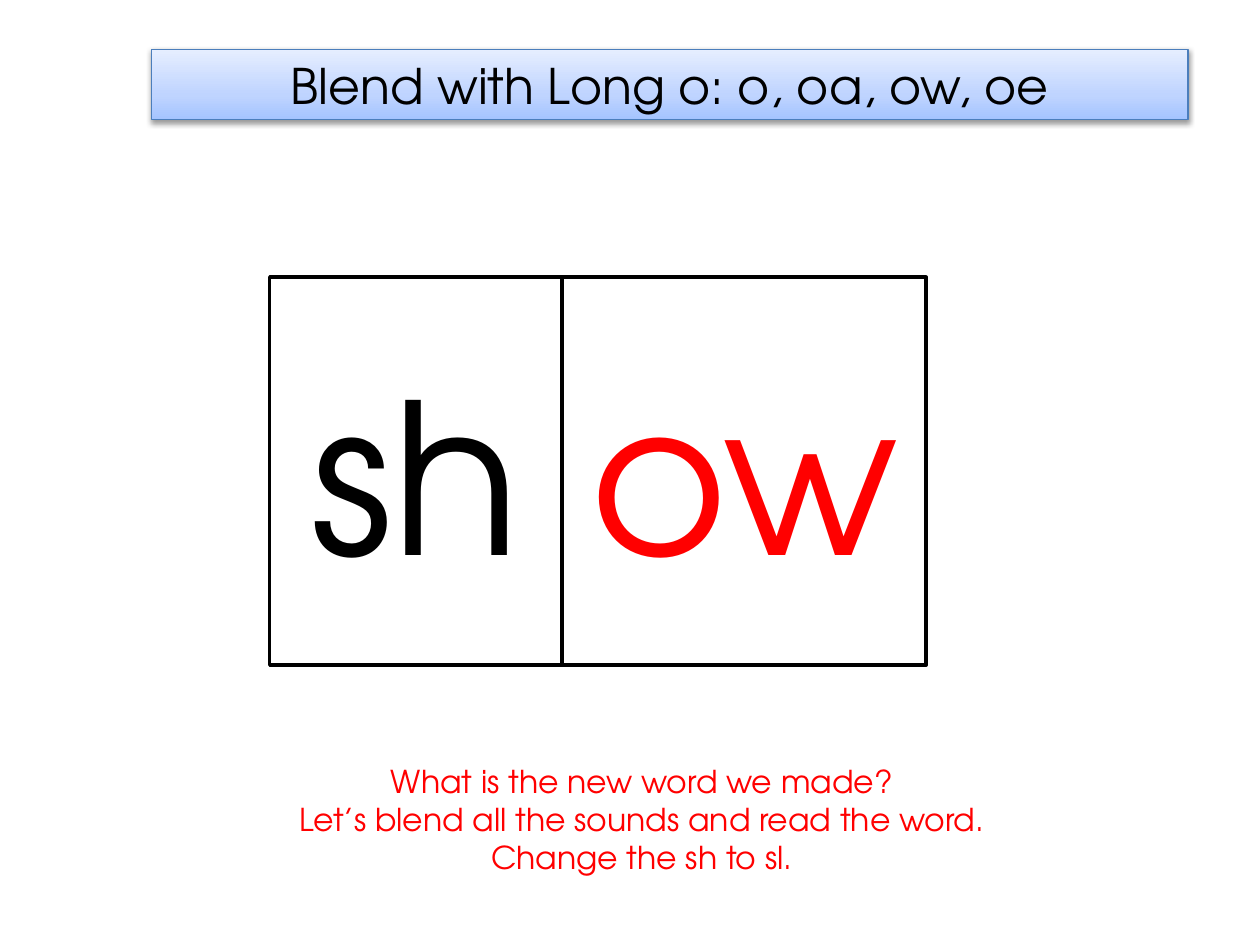
from copy import deepcopy
from dataclasses import dataclass

from pptx import Presentation
from pptx.dml.color import RGBColor
from pptx.enum.shapes import MSO_SHAPE
from pptx.enum.text import MSO_ANCHOR, MSO_AUTO_SIZE, PP_ALIGN
from pptx.oxml import parse_xml
from pptx.oxml.ns import nsdecls
from pptx.util import Inches, Pt


@dataclass(frozen=True)
class Theme:
    font: str = "TeX Gyre Adventor"
    black: RGBColor = RGBColor(0, 0, 0)
    white: RGBColor = RGBColor(255, 255, 255)
    red: RGBColor = RGBColor(255, 0, 0)
    banner_line: RGBColor = RGBColor(0x4B, 0x7E, 0xBC)
    banner_stops: tuple = ((0, "A4C4FF"), (0.35, "BFD4FF"), (1, "E6EEFF"))
    title_size: int = 28
    card_size: int = 120
    prompt_size: int = 18


theme = Theme()


def write_lines(shape, lines, size, color, anchor):
    frame = shape.text_frame
    frame.word_wrap = True
    frame.vertical_anchor = anchor
    frame.text = "\n".join(lines)
    for para in frame.paragraphs:
        para.alignment = PP_ALIGN.CENTER
        for span in para.runs:
            span.font.name = theme.font
            span.font.size = Pt(size)
            span.font.color.rgb = color


deck = Presentation()
deck.slide_width = Inches(10)
deck.slide_height = Inches(7.5)
page = deck.slides.add_slide(deck.slide_layouts[5])

banner = page.shapes.title
banner.left, banner.top = Inches(1.2), Inches(0.39)
banner.width, banner.height = Inches(8.23), Inches(0.56)
banner.fill.gradient()
banner.fill.gradient_angle = 90
first_stop = banner.fill.gradient_stops[0].color
stop_list = banner.element.spPr.find(".//{*}gsLst")
stop_list.append(deepcopy(stop_list[0]))
for stop, (position, color) in zip(banner.fill.gradient_stops, theme.banner_stops):
    stop.position = position
    stop.color.rgb = RGBColor.from_string(color)
banner.line.color.rgb = theme.banner_line
banner.line.width = Pt(0.75)
banner.element.spPr.append(parse_xml(
    f'<a:effectLst {nsdecls("a")}>'
    f'<a:outerShdw blurRad="{Pt(3.1)}" dist="{Pt(1.6)}" dir="5400000" rotWithShape="0">'
    f'<a:srgbClr val="{theme.black}"><a:alpha val="38000"/></a:srgbClr>'
    '</a:outerShdw></a:effectLst>'
))
write_lines(banner, ["Blend with Long o: o, oa, ow, oe"],
            theme.title_size, theme.black, MSO_ANCHOR.MIDDLE)
banner.text_frame.auto_size = MSO_AUTO_SIZE.NONE

card_left = Inches(2.14)
for sound, width, color in (("sh", 2.32, theme.black), ("ow", 2.89, theme.red)):
    card = page.shapes.add_shape(
        MSO_SHAPE.RECTANGLE, card_left, Inches(2.2), Inches(width), Inches(3.08))
    card.shadow.inherit = False
    card.fill.solid()
    card.fill.fore_color.rgb = theme.white
    card.line.color.rgb = theme.black
    card.line.width = Pt(2)
    write_lines(card, [sound], theme.card_size, color, MSO_ANCHOR.MIDDLE)
    card_left += card.width

prompt = page.shapes.add_textbox(Inches(1.61), Inches(6), Inches(6.97), Inches(1.01))
write_lines(prompt, [
    "What is the new word we made?",
    "Let’s blend all the sounds and read the word.",
    "Change the sh to sl.",
], theme.prompt_size, theme.red, MSO_ANCHOR.TOP)
prompt.text_frame.auto_size = MSO_AUTO_SIZE.SHAPE_TO_FIT_TEXT

deck.save("out.pptx")
